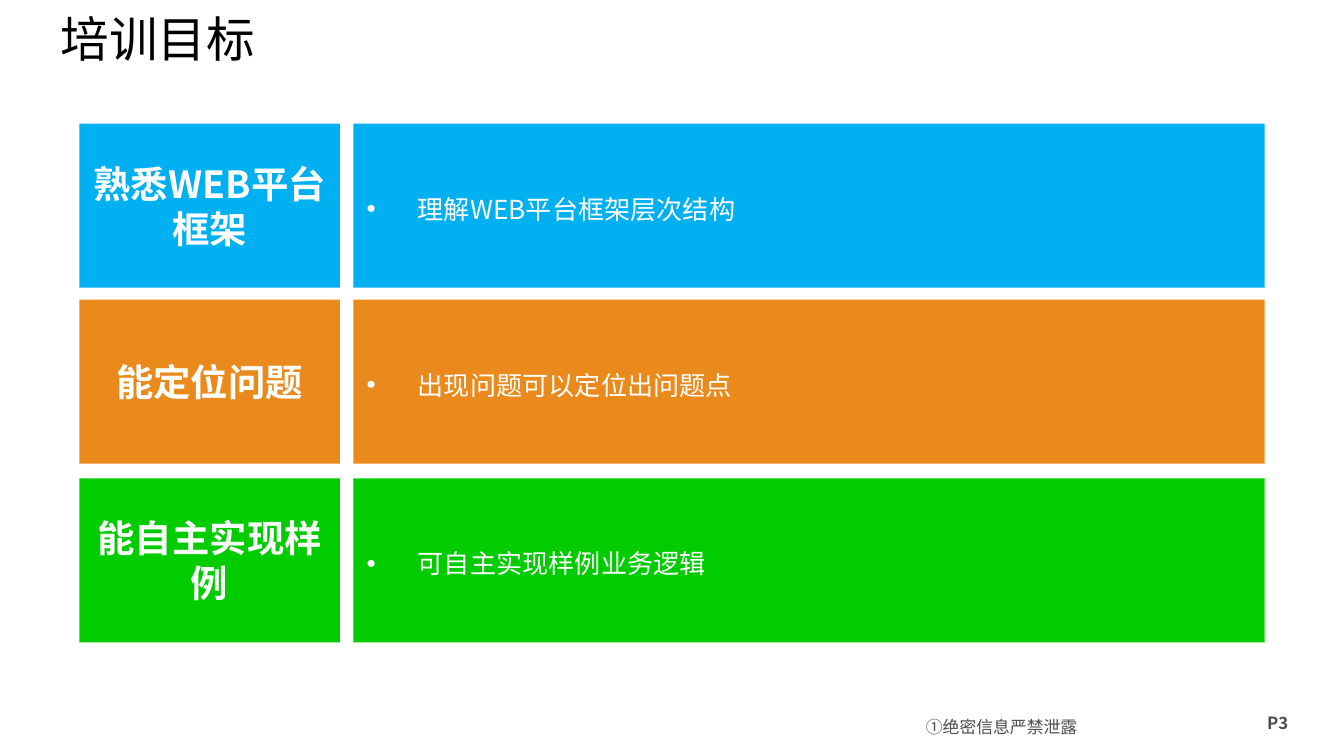
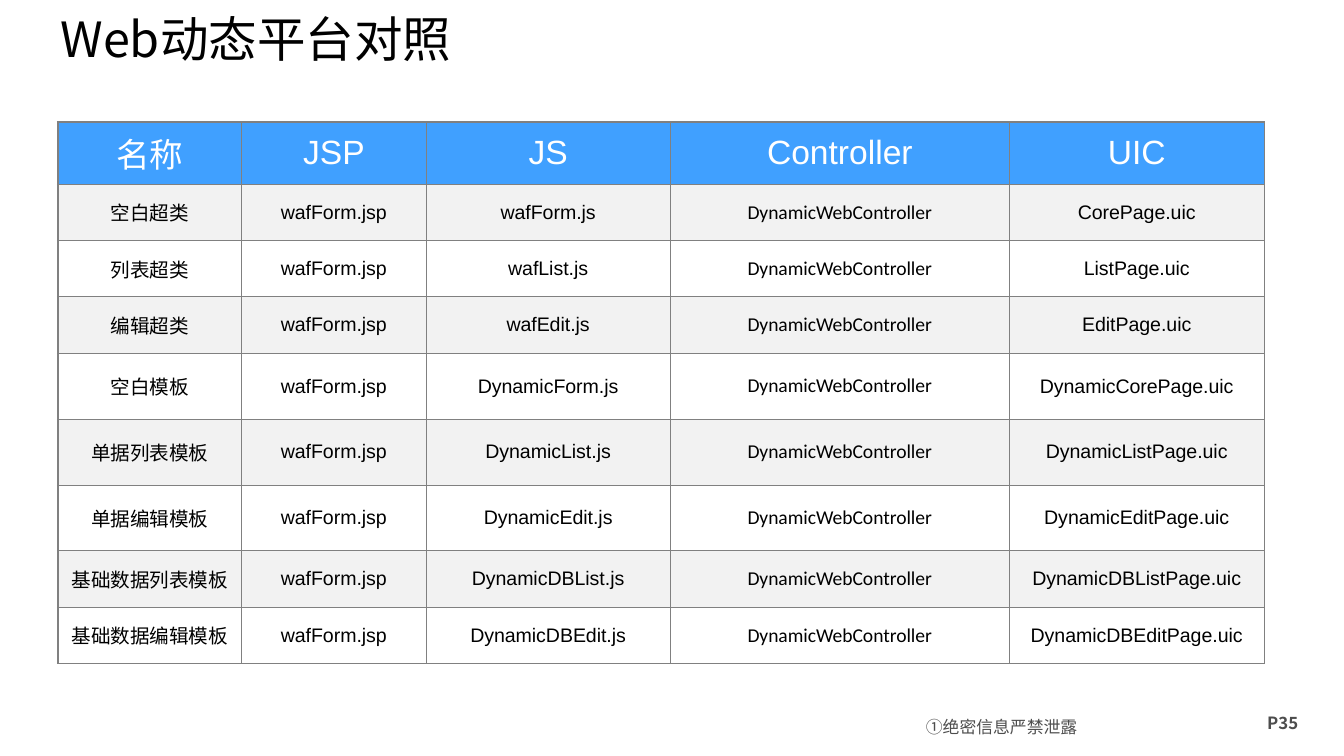
from lxml import etree
from pptx import Presentation
from pptx import util as u
from pptx.dml.color import RGBColor
from pptx.enum import shapes, text
from pptx.oxml.ns import qn

# Shared style
SANS, LATIN, CODE = "Noto Sans CJK SC", "Arial", "Calibri"
BLACK, WHITE, FOOTER_GREY = "000000", "FFFFFF", "4D4D4D"
HEADER_BLUE, STRIPE, BORDER = "40A0FF", "F2F2F2", "808080"
CENTER = text.PP_ALIGN.CENTER
MIDDLE = text.MSO_ANCHOR.MIDDLE

# Goals: top, label, detail, colour
GOALS = [
    (0.92, "熟悉WEB平台框架", "理解WEB平台框架层次结构", "00B0F0"),
    (2.23, "能定位问题", "出现问题可以定位出问题点", "EA8A1C"),
    (3.56, "能自主实现样例", "可自主实现样例业务逻辑", "00CC00"),
]
GOAL_HEIGHT = 1.22

# Comparison table: name, script file, page file
HEADERS = ["名称", "JSP", "JS", "Controller", "UIC"]
PAGES = [
    ("空白超类", "wafForm.js", "CorePage.uic"),
    ("列表超类", "wafList.js", "ListPage.uic"),
    ("编辑超类", "wafEdit.js", "EditPage.uic"),
    ("空白模板", "DynamicForm.js", "DynamicCorePage.uic"),
    ("单据列表模板", "DynamicList.js", "DynamicListPage.uic"),
    ("单据编辑模板", "DynamicEdit.js", "DynamicEditPage.uic"),
    ("基础数据列表模板", "DynamicDBList.js", "DynamicDBListPage.uic"),
    ("基础数据编辑模板", "DynamicDBEdit.js", "DynamicDBEditPage.uic"),
]
COLUMN_WIDTHS = [1.37, 1.37, 1.82, 2.52, 1.9]
ROW_HEIGHTS = [0.46] + [0.42] * 3 + [0.49] * 3 + [0.42] * 2


def color(value):
    return RGBColor.from_string(value)


def inches(*values):
    return [u.Inches(value) for value in values]


def add_span(para, words, size, ink, font=SANS, bold=False):
    span = para.add_run()
    span.text = words
    span.font.size = u.Pt(size)
    span.font.bold = bold
    span.font.color.rgb = color(ink)
    span.font.name = font
    east_asian = etree.SubElement(span.font._element, qn("a:ea"))
    east_asian.set("typeface", SANS)


def set_bullet(para, indent):
    props = para._p.get_or_add_pPr()
    props.set("marL", str(u.Inches(indent)))
    props.set("indent", str(-u.Inches(indent)))
    font = etree.SubElement(props, qn("a:buFont"))
    font.set("typeface", LATIN)
    etree.SubElement(props, qn("a:buChar")).set("char", "•")


# Slide frame
def add_footer_text(slide, area, words, insets, bold=False):
    box = slide.shapes.add_textbox(*inches(*area))
    frame = box.text_frame
    frame.word_wrap = True
    frame.margin_left = frame.margin_right = u.Inches(insets[0])
    frame.margin_top = frame.margin_bottom = u.Inches(insets[1])
    para = frame.paragraphs[0]
    add_span(para, words, 9, FOOTER_GREY, bold=bold)
    return para


def add_slide(deck, title, page_number):
    slide = deck.slides.add_slide(deck.slide_layouts[5])
    notice = add_footer_text(slide, (6.81, 5.28, 1.77, 0.27),
                             "①绝密信息严禁泄露", (0.08, 0.01))
    notice.alignment = text.PP_ALIGN.JUSTIFY
    notice.line_spacing = u.Pt(14)
    add_footer_text(slide, (9.33, 5.25, 0.56, 0.25), f"P{page_number}",
                    (0.1, 0.05), bold=True)

    heading = slide.shapes.title
    heading.left, heading.top, heading.width, heading.height = inches(0.35, 0, 7.8, 0.57)
    frame = heading.text_frame
    frame.auto_size = text.MSO_AUTO_SIZE.NONE
    frame.vertical_anchor = MIDDLE
    frame.paragraphs[0].alignment = text.PP_ALIGN.LEFT
    add_span(frame.paragraphs[0], title, 26, BLACK)
    return slide


# Goal rows
def add_block(slide, left, top, width, fill):
    box = slide.shapes.add_shape(shapes.MSO_SHAPE.RECTANGLE,
                                 *inches(left, top, width, GOAL_HEIGHT))
    box.shadow.inherit = False
    box.fill.solid()
    box.fill.fore_color.rgb = color(fill)
    box.line.fill.background()
    box.text_frame.word_wrap = True
    box.text_frame.vertical_anchor = MIDDLE
    return box.text_frame.paragraphs[0]


def add_goal(slide, top, label, detail, fill):
    para = add_block(slide, 0.59, top, 1.94, fill)
    para.alignment = CENTER
    add_span(para, label, 20, WHITE, bold=True)

    para = add_block(slide, 2.63, top, 6.78, fill)
    para.alignment = text.PP_ALIGN.LEFT
    para.line_spacing = 1.2
    set_bullet(para, 0.38)
    add_span(para, detail, 14, WHITE)


# Comparison table
def set_borders(cell, widths):
    props = cell._tc.get_or_add_tcPr()
    for index, (side, width) in enumerate(widths.items()):
        line = etree.Element(qn(f"a:ln{side}"), w=str(u.Pt(width)))
        fill = etree.SubElement(line, qn("a:solidFill"))
        etree.SubElement(fill, qn("a:srgbClr")).set("val", BORDER)
        props.insert(index, line)


def fill_cell(cell, words, fill, size, ink, font):
    cell.fill.solid()
    cell.fill.fore_color.rgb = color(fill)
    cell.vertical_anchor = MIDDLE
    para = cell.text_frame.paragraphs[0]
    para.alignment = CENTER
    add_span(para, words, size, ink, font)


def add_comparison(slide):
    rows = [HEADERS] + [(name, "wafForm.jsp", script, "DynamicWebController", page)
                        for name, script, page in PAGES]
    last_row, last_column = len(rows) - 1, len(HEADERS) - 1
    frame = slide.shapes.add_table(
        len(rows), len(HEADERS),
        *inches(0.43, 0.91, sum(COLUMN_WIDTHS), sum(ROW_HEIGHTS)))
    table = frame.table
    table.first_row = table.horz_banding = False
    for column, width in zip(table.columns, COLUMN_WIDTHS):
        column.width = u.Inches(width)
    for row, height in zip(table.rows, ROW_HEIGHTS):
        row.height = u.Inches(height)

    for r, values in enumerate(rows):
        for c, words in enumerate(values):
            cell = table.cell(r, c)
            if r == 0:
                fill_cell(cell, words, HEADER_BLUE, 18, WHITE, LATIN)
            else:
                fill_cell(cell, words, STRIPE if r % 2 else WHITE, 10.5, BLACK,
                          CODE if HEADERS[c] == "Controller" else LATIN)
            outer = {"L": c == 0, "R": c == last_column, "T": r == 0, "B": r == last_row}
            set_borders(cell, {side: 1 if edge else 0.5 for side, edge in outer.items()})


def main():
    deck = Presentation()
    # Widescreen, 16:9
    deck.slide_width = u.Inches(10)
    deck.slide_height = u.Inches(10 * 9 / 16)

    slide = add_slide(deck, "培训目标", 3)
    for goal in GOALS:
        add_goal(slide, *goal)

    slide = add_slide(deck, "Web动态平台对照", 35)
    add_comparison(slide)

    deck.save("out.pptx")


if __name__ == "__main__":
    main()
